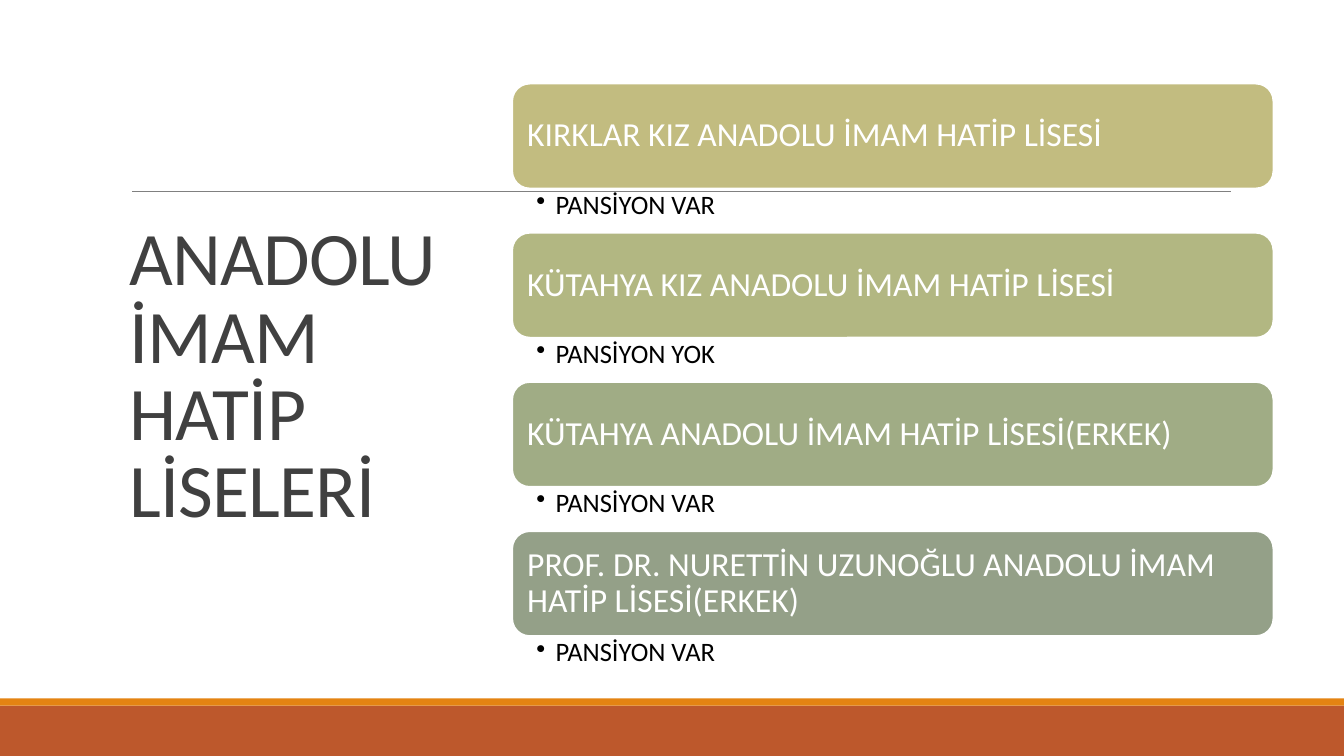
from dataclasses import dataclass
from lxml.etree import SubElement
from pptx import Presentation
from pptx.dml.color import RGBColor
from pptx.enum.shapes import MSO_CONNECTOR as Connector, MSO_SHAPE as Preset
from pptx.enum.text import MSO_ANCHOR as Anchor, MSO_AUTO_SIZE as AutoSize, PP_ALIGN as Align
from pptx.oxml.ns import qn
from pptx.util import Inches, Pt


@dataclass(frozen=True)
class Theme:
    font: str = "Calibri"
    title_size: float = 54
    school_size: float = 24
    note_size: float = 19
    title: str = "404040"
    light: str = "FFFFFF"
    dark: str = "000000"
    rule: str = "808080"
    footer: str = "BD582C"
    stripe: str = "E48312"
    cards: tuple = ("C2BC80", "B2B782", "A0AC85", "94A088")


theme = Theme()


def write(shape, text, size, color, anchor=Anchor.MIDDLE, insets=(0.1, 0.1, 0.1, 0.1),
          line_spacing=0.9, tracking=0, bullet_indent=0):
    frame = shape.text_frame
    frame.word_wrap = True
    frame.auto_size = AutoSize.NONE
    frame.vertical_anchor = anchor
    frame.margin_left, frame.margin_top, frame.margin_right, frame.margin_bottom = map(Inches, insets)
    paragraph = frame.paragraphs[0]
    paragraph.alignment = Align.LEFT
    paragraph.line_spacing = line_spacing
    run = paragraph.add_run()
    run.text = text
    run.font.name = theme.font
    run.font.size = Pt(size)
    run.font.color.rgb = RGBColor.from_string(color)
    if tracking:
        run._r.get_or_add_rPr().set("spc", str(round(tracking * 100)))
    if bullet_indent:
        properties = paragraph._p.get_or_add_pPr()
        properties.set("marL", str(Inches(bullet_indent)))
        properties.set("indent", str(-Inches(bullet_indent)))
        SubElement(properties, qn("a:buChar"), char="•")


def add_block(preset, left, top, width, height, fill):
    shape = slide.shapes.add_shape(preset, left, top, width, height)
    shape.shadow.inherit = False
    shape.fill.solid()
    shape.fill.fore_color.rgb = RGBColor.from_string(fill)
    shape.line.fill.background()
    return shape


presentation = Presentation()
presentation.slide_width = Inches(13.33)
presentation.slide_height = Inches(7.5)
slide = presentation.slides.add_slide(presentation.slide_layouts[5])

footer_top, stripe_height = Inches(7), Inches(0.07)
add_block(Preset.RECTANGLE, 0, footer_top, presentation.slide_width,
          presentation.slide_height - footer_top, theme.footer)
add_block(Preset.RECTANGLE, 0, footer_top - stripe_height, presentation.slide_width,
          stripe_height, theme.stripe)

rule = slide.shapes.add_connector(Connector.STRAIGHT, Inches(1.31), Inches(1.9), Inches(12.21), Inches(1.9))
rule.line.color.rgb = RGBColor.from_string(theme.rule)
rule.line.width = Pt(0.5)
SubElement(rule._element.spPr, qn("a:effectLst"))

title = slide.shapes.title
title.left, title.top, title.width, title.height = map(Inches, (1.18, 0.7, 3.74, 6.11))
write(title, "ANADOLU İMAM HATİP LİSELERİ", theme.title_size, theme.title,
      insets=(0.1, 0.05, 0.1, 0.05), line_spacing=0.85, tracking=-0.5)

schools = (
    ("KIRKLAR KIZ ANADOLU İMAM HATİP LİSESİ", "PANSİYON VAR"),
    ("KÜTAHYA KIZ ANADOLU İMAM HATİP LİSESİ", "PANSİYON YOK"),
    ("KÜTAHYA ANADOLU İMAM HATİP LİSESİ(ERKEK)", "PANSİYON VAR"),
    ("PROF. DR. NURETTİN UZUNOĞLU ANADOLU İMAM HATİP LİSESİ(ERKEK)", "PANSİYON VAR"),
)
list_left, list_top, list_width = Inches(5.08), Inches(0.83), Inches(7.55)
row_pitch, card_height, note_height = Inches(1.48), Inches(1.04), Inches(0.43)

for row, ((school, note), fill) in enumerate(zip(schools, theme.cards)):
    top = list_top + row * row_pitch
    card = add_block(Preset.ROUNDED_RECTANGLE, list_left, top, list_width, card_height, fill)
    card.line.color.rgb = RGBColor.from_string(theme.light)
    card.line.width = Pt(1.25)
    write(card, school, theme.school_size, theme.light)
    note_box = slide.shapes.add_textbox(list_left, top + card_height, list_width, note_height)
    write(note_box, note, theme.note_size, theme.dark, anchor=Anchor.TOP,
          insets=(0.24, 0.03, 0.19, 0.03), bullet_indent=0.19)

presentation.save("out.pptx")
